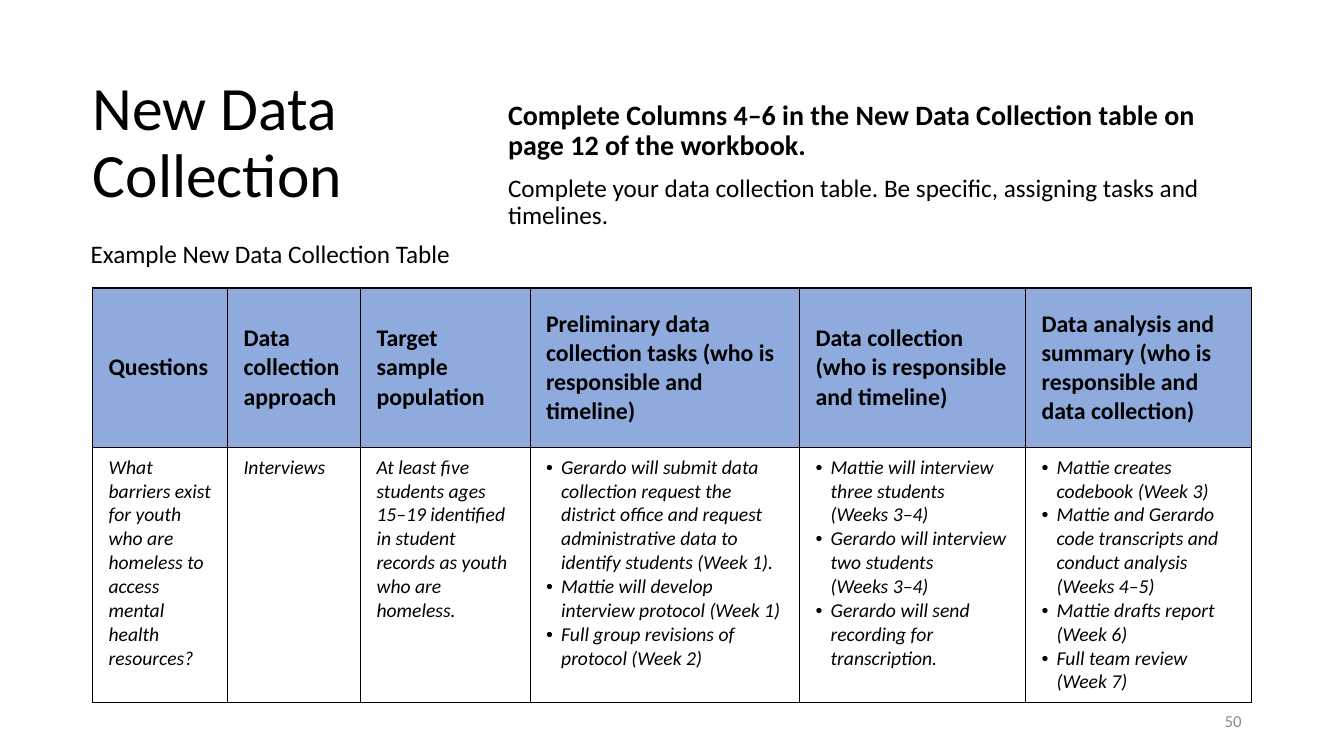
from copy import deepcopy
from lxml.etree import SubElement
from pptx import Presentation
from pptx.dml.color import RGBColor
from pptx.enum.text import MSO_ANCHOR, MSO_AUTO_SIZE, PP_ALIGN
from pptx.oxml.ns import qn
from pptx.util import Pt

FONT = "Calibri"
BLACK, WHITE, BLUE, GRAY = "000000", "FFFFFF", "8FAADC", "8C8C8C"
WIDTHS = [96.4, 95, 121.1, 192.5, 161.5, 161.5]
HEADS = [
    "Questions",
    "Data collection approach",
    "Target sample population",
    "Preliminary data collection tasks (who is responsible and timeline)",
    "Data collection (who is responsible and timeline)",
    "Data analysis and summary (who is responsible and data collection)",
]
# A string is plain text; a list is bulleted.
PLANS = [
    "What barriers exist for youth who are homeless to access mental health resources?",
    "Interviews",
    "At least five students ages 15–19 identified in student records as youth who are homeless.",
    ["Gerardo will submit data collection request the district office and request "
     "administrative data to identify students (Week 1).",
     "Mattie will develop interview protocol (Week 1)",
     "Full group revisions of protocol (Week 2)"],
    ["Mattie will interview three students\n(Weeks 3–4)",
     "Gerardo will interview two students\n(Weeks 3–4)",
     "Gerardo will send recording for transcription."],
    ["Mattie creates codebook (Week 3)",
     "Mattie and Gerardo code transcripts and conduct analysis (Weeks 4–5)",
     "Mattie drafts report (Week 6)",
     "Full team review\n(Week 7)"],
]


def paint(color, code):
    color.rgb = RGBColor.from_string(code)


def fill(cell, code):
    cell.fill.solid()
    paint(cell.fill.fore_color, code)


def write(para, text, size, code=BLACK, bold=False, italic=False):
    """Add runs to a paragraph, with a line break at each newline."""
    for i, line in enumerate(text.split("\n")):
        if i:
            para.add_line_break()
            para._p[-1].append(deepcopy(run._r.rPr))
        run = para.add_run()
        run.text = line
        font = run.font
        font.name, font.size = FONT, Pt(size)
        font.bold, font.italic = bold, italic
        paint(font.color, code)


def indent(para, size, char=None):
    """Hang a paragraph by size points behind a bullet, or behind none."""
    props = para._p.get_or_add_pPr()
    props.set("marL", str(Pt(size)))
    props.set("indent", str(-Pt(size)))
    if char:
        SubElement(props, qn("a:buFont"), typeface="Arial")
        SubElement(props, qn("a:buChar"), char=char)
    else:
        SubElement(props, qn("a:buNone"))


def place(shape, left, top, width, height):
    shape.left, shape.top = Pt(left), Pt(top)
    shape.width, shape.height = Pt(width), Pt(height)
    frame = shape.text_frame
    frame.word_wrap = True
    frame.auto_size = MSO_AUTO_SIZE.NONE
    frame.vertical_anchor = MSO_ANCHOR.MIDDLE
    return frame


def add_title(slide):
    frame = place(slide.shapes.title, 66.25, 46, 280, 114)
    frame.margin_left = 0
    para = frame.paragraphs[0]
    para.alignment = PP_ALIGN.LEFT
    para.line_spacing = 0.9
    write(para, "New Data Collection", 44)


def add_body(slide):
    frame = place(slide.placeholders[1], 355.7, 53.3, 538, 129.6)
    lead = frame.paragraphs[0]
    task = frame.add_paragraph()
    for para, gap in ((lead, 0), (task, 10)):
        indent(para, 0)
        para.line_spacing = 0.9
        para.space_before = Pt(gap)
    write(lead, "Complete Columns 4–6 in the New Data Collection table on "
          "page 12 of the workbook.", 20, bold=True)
    write(task, "Complete your data collection table. Be specific, "
          "assigning tasks and timelines.", 18)


def add_label(slide, box, text, size, code, align):
    frame = place(slide.shapes.add_textbox(0, 0, 0, 0), *box)
    para = frame.paragraphs[0]
    para.alignment = align
    write(para, text, size, code)


def frame_cell(cell):
    """Set the margins and a thin black border on each side."""
    cell.margin_left = cell.margin_right = Pt(11.4)
    cell.margin_top = cell.margin_bottom = Pt(5.7)
    props = cell._tc.get_or_add_tcPr()
    for side in ("lnL", "lnR", "lnT", "lnB"):
        line = SubElement(props, qn("a:" + side), w=str(Pt(1)))
        ink = SubElement(line, qn("a:solidFill"))
        SubElement(ink, qn("a:srgbClr"), val=BLACK)


def add_head(cell, text):
    frame_cell(cell)
    fill(cell, BLUE)
    cell.vertical_anchor = MSO_ANCHOR.MIDDLE
    write(cell.text_frame.paragraphs[0], text, 17, bold=True)


def add_plan(cell, plan):
    frame_cell(cell)
    fill(cell, WHITE)
    frame = cell.text_frame
    items = plan if isinstance(plan, list) else [plan]
    for i, item in enumerate(items):
        para = frame.add_paragraph() if i else frame.paragraphs[0]
        if items is plan:
            indent(para, 10.8, "•")
        write(para, item, 14, italic=True)


def add_grid(slide):
    grid = slide.shapes.add_table(
        2, len(WIDTHS), Pt(66.2), Pt(205.7), Pt(sum(WIDTHS)), Pt(296)).table
    grid.rows[0].height, grid.rows[1].height = Pt(114), Pt(182)
    for i, (width, head, plan) in enumerate(zip(WIDTHS, HEADS, PLANS)):
        grid.columns[i].width = Pt(width)
        add_head(grid.cell(0, i), head)
        add_plan(grid.cell(1, i), plan)


def main():
    deck = Presentation()
    deck.slide_width, deck.slide_height = Pt(960), Pt(540)
    slide = deck.slides.add_slide(deck.slide_layouts[1])
    add_body(slide)
    add_title(slide)
    add_grid(slide)
    add_label(slide, (57.6, 166.3, 345.6, 30), "Example New Data Collection Table",
              18, BLACK, PP_ALIGN.LEFT)
    add_label(slide, (678, 500.5, 216, 28.75), "50", 12, GRAY, PP_ALIGN.RIGHT)
    deck.save("out.pptx")


if __name__ == "__main__":
    main()
